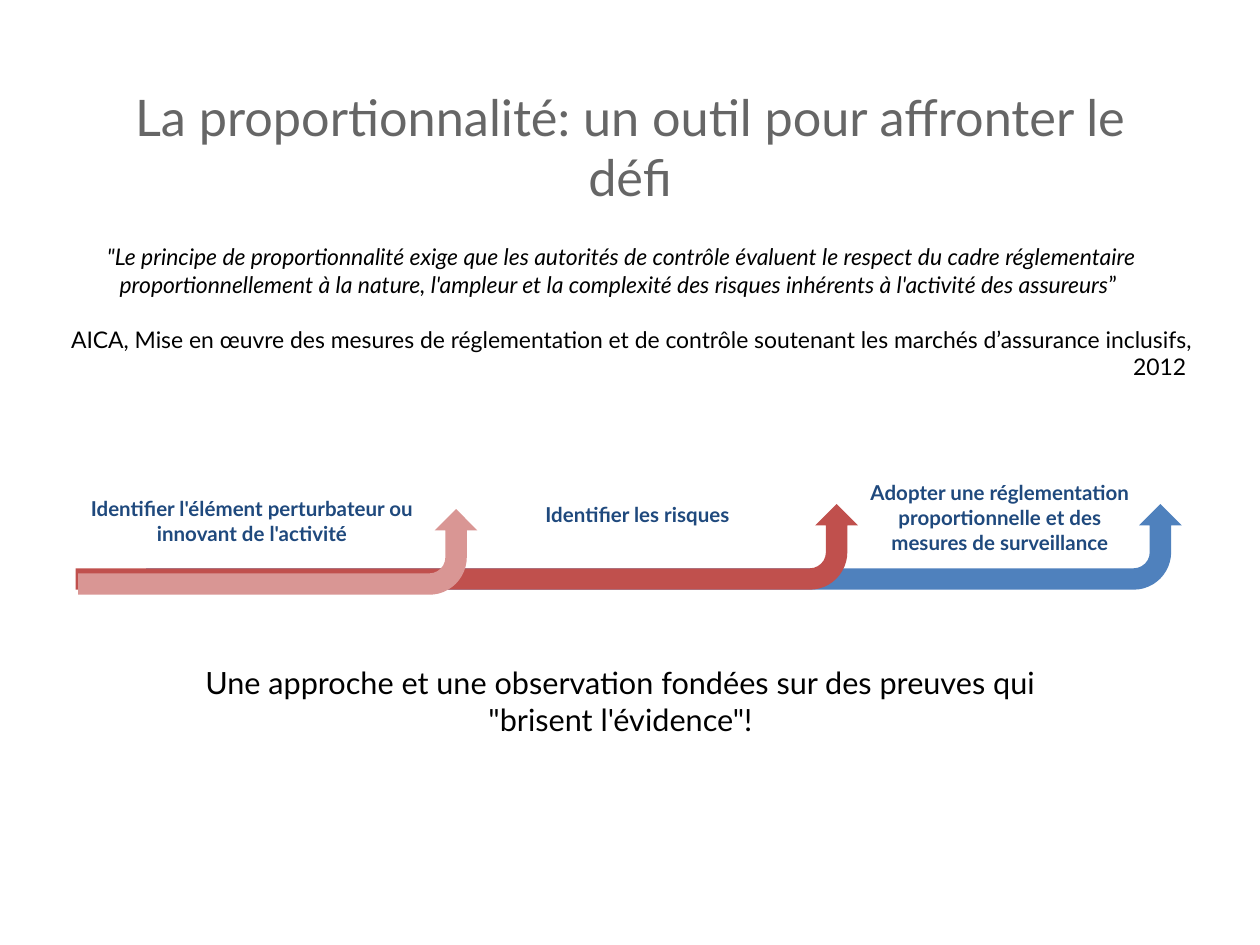
from dataclasses import dataclass

from pptx import Presentation, util as u
from pptx.dml.color import RGBColor
from pptx.enum import shapes, text

# The slide is a grid of 100 columns by 75 rows
COLS, ROWS = 100, 75
WIDE, HIGH = u.Inches(10), u.Inches(7.5)
FONT = "Lato"
MID, RIGHT = text.PP_ALIGN.CENTER, text.PP_ALIGN.RIGHT


@dataclass
class Run:
    words: str
    size: float
    color: str = "000000"
    bold: bool = False
    slant: bool = False


@dataclass
class Para:
    runs: list[Run]
    align: int = MID
    gap: float = 0


@dataclass
class Box:
    col: float
    row: float
    cols: float
    rows: float
    paras: list[Para]
    centred: bool = False


@dataclass
class Arrow:
    left: float
    top: float
    right: float
    color: str


def across(cols: float) -> int:
    return round(WIDE * cols / COLS)


def down(rows: float) -> int:
    return round(HIGH * rows / ROWS)


def paint(target, color: str) -> None:
    target.rgb = RGBColor.from_string(color)


def draw_box(slide, box: Box) -> None:
    shape = slide.shapes.add_textbox(
        across(box.col), down(box.row), across(box.cols), down(box.rows))
    frame = shape.text_frame
    frame.word_wrap = True
    if box.centred:
        frame.vertical_anchor = text.MSO_ANCHOR.MIDDLE
    for i, para in enumerate(box.paras):
        line = frame.add_paragraph() if i else frame.paragraphs[0]
        line.alignment = para.align
        if para.gap:
            line.space_before = u.Pt(para.gap)
        for run in para.runs:
            piece = line.add_run()
            piece.text = run.words
            font = piece.font
            font.name, font.size = FONT, u.Pt(run.size)
            font.bold, font.italic = run.bold, run.slant
            paint(font.color, run.color)


def draw_arrow(slide, arrow: Arrow) -> None:
    """Draw a bent arrow that runs right, then turns up."""
    length, depth = across(arrow.right - arrow.left), down(DEPTH)
    mid_x = across(arrow.left) + length // 2
    mid_y = down(arrow.top) + depth // 2
    # The preset points right, so it is mirrored and turned a quarter
    shape = slide.shapes.add_shape(
        shapes.MSO_SHAPE.BENT_ARROW,
        mid_x - depth // 2, mid_y - length // 2, depth, length)
    shape.rotation = 90
    shape.element.spPr.xfrm.set("flipH", "1")
    shape.shadow.inherit = False
    shape.fill.solid()
    paint(shape.fill.fore_color, arrow.color)
    shape.line.fill.background()


def label(col: float, row: float, cols: float, rows: float,
          words: str) -> Box:
    run = Run(words, 11.7, "1F497D", bold=True)
    return Box(col, row, cols, rows, [Para([run])], centred=True)


DEPTH = 6.8
ARROWS = [
    Arrow(11.6, 40, 93.8, "4F81BD"),
    Arrow(6, 40, 68.1, "C0504D"),
    Arrow(6.2, 40.4, 37.9, "D99694"),
]

TITLE = Box(8.6, 6.6, 82.8, 10, [Para([Run(
    "La proportionnalité: un outil pour affronter le défi",
    28.8, "666666")])], centred=True)

LABELS = [
    label(6, 38.9, 28, 4.9,
          "Identifier l'élément perturbateur ou innovant de l'activité"),
    label(36.8, 39.3, 28, 3, "Identifier les risques "),
    label(67.4, 37.6, 23.9, 6.9,
          "Adopter une réglementation proportionnelle et des mesures "
          "de surveillance"),
]

CLOSING = Box(14.3, 52.2, 69.9, 6.9, [Para([Run(
    "Une approche et une observation fondées sur des preuves qui "
    "\"brisent l'évidence\"!", 17.5)])])

QUOTE = Box(3, 18.8, 92.6, 14.3, [
    Para([
        Run("\"Le principe de proportionnalité exige que les autorités de "
            "contrôle évaluent le respect du cadre réglementaire "
            "proportionnellement à la nature, l'ampleur et la complexité "
            "des risques inhérents à l'activité des assureurs",
            13.1, slant=True),
        Run("” ", 13.1),
    ]),
    Para([Run("AICA, Mise en œuvre des mesures de réglementation et de "
              "contrôle soutenant les marchés d’assurance inclusifs, 2012 ",
              13.1)], RIGHT, gap=15.7),
])


def main() -> None:
    deck = Presentation()
    deck.slide_width, deck.slide_height = WIDE, HIGH
    slide = deck.slides.add_slide(deck.slide_layouts[6])
    # Arrows, longest at the back
    for arrow in ARROWS:
        draw_arrow(slide, arrow)
    # Title, step labels, closing line and quotation
    for box in [TITLE, *LABELS, CLOSING, QUOTE]:
        draw_box(slide, box)
    deck.save("out.pptx")


if __name__ == "__main__":
    main()
